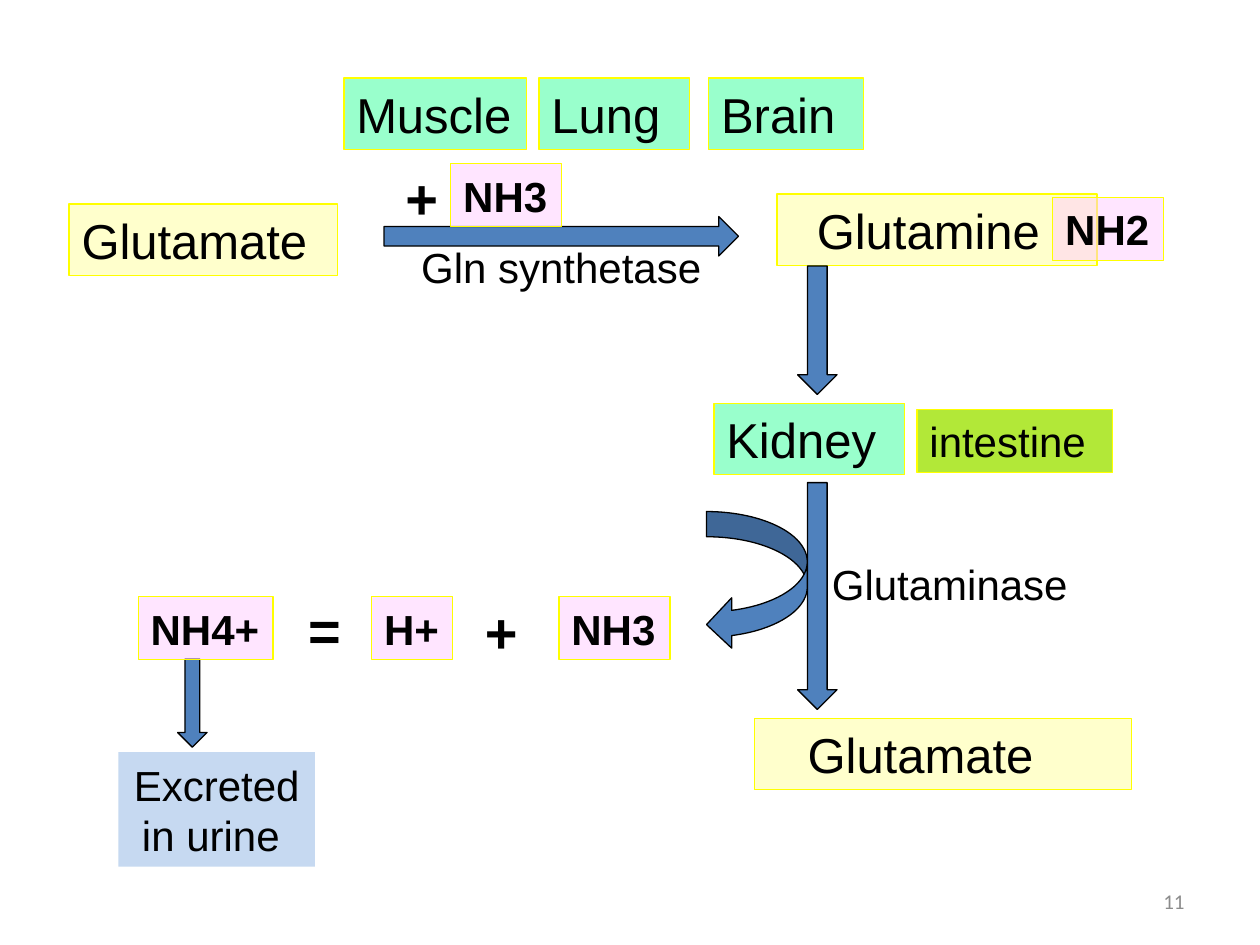
from lxml import etree
from pptx import Presentation
from pptx.dml.color import RGBColor
from pptx.enum import shapes, text
from pptx.oxml import ns
from pptx.util import Pt

GREEN, CREAM, PINK = "99FFCC", "FFFFCC", "FFCCFF"
LEFT, MID, RIGHT = text.PP_ALIGN.LEFT, text.PP_ALIGN.CENTER, text.PP_ALIGN.RIGHT
KIND = shapes.MSO_SHAPE


def color(code):
    return RGBColor.from_string(code)


class Page:
    font = "Arial"
    ink = "000000"
    blue = "4F81BD"
    edge = "FFFF00"
    high = {24: 36, 28: 41, 32: 46}

    def __init__(self, slide):
        self.slide = slide

    def shape(self, kind, x, y, w, h, fill, line):
        item = self.slide.shapes.add_shape(kind, Pt(x), Pt(y), Pt(w), Pt(h))
        item.shadow.inherit = False
        item.fill.solid()
        item.fill.fore_color.rgb = color(fill)
        if line:
            item.line.color.rgb = color(line)
            item.line.width = Pt(0.75)
        else:
            item.line.fill.background()
        return item

    def put(self, item, words, size, bold=False, align=LEFT, inset=7.2,
            ink=None, font=None):
        frame = item.text_frame
        frame.text = words
        frame.word_wrap = True
        frame.margin_left = Pt(inset)
        frame.margin_right = Pt(0 if align == LEFT else 7.2)
        part = frame.paragraphs[0]
        part.alignment = align
        style = part.runs[0].font
        style.name = font or self.font
        style.size = Pt(size)
        style.bold = bold
        style.color.rgb = color(ink or self.ink)

    def box(self, words, x, y, w, fill, size=28, inset=7.2):
        item = self.shape(KIND.RECTANGLE, x, y, w, self.high[size], fill, self.edge)
        self.put(item, words, size, inset=inset)

    def ion(self, words, x, y, w=63.4):
        item = self.shape(KIND.RECTANGLE, x, y, w, self.high[24], PINK, self.edge)
        self.put(item, words, 24, bold=True)
        tint = item.element.spPr.find(ns.qn("a:solidFill"))[0]
        etree.SubElement(tint, ns.qn("a:alpha"), val="50000")

    def arrow(self, kind, x, y, w, h, turn=0):
        item = self.shape(kind, x, y, w, h, self.blue, self.ink)
        item.rotation = turn

    def label(self, words, x, y, w, size, h=None, **style):
        item = self.slide.shapes.add_textbox(
            Pt(x), Pt(y), Pt(w), Pt(h or self.high[size]))
        self.put(item, words, size, **style)
        return item

    def sign(self, words, x, y):
        self.label(words, x, y, 33, 32, bold=True)


def main():
    deck = Presentation()
    deck.slide_width, deck.slide_height = Pt(720), Pt(540)
    page = Page(deck.slides.add_slide(deck.slide_layouts[6]))

    for organ, x, w in (("Muscle", 196.5, 104.5), ("Lung", 308, 86),
                        ("Brain", 405, 88.5)):
        page.box(organ, x, 44.6, w, GREEN)

    page.box("Glutamate", 39.5, 116.6, 153.5, CREAM)
    page.box("Glutamine", 444, 110.8, 183, CREAM, inset=22.8)
    page.box("Kidney", 408, 230.4, 109, GREEN)
    page.box("intestine", 524, 234, 111.6, "B2E838", 24)
    page.box("Glutamate", 431, 410.4, 215.5, CREAM, inset=30.5)

    page.arrow(KIND.RIGHT_ARROW, 219.5, 123.8, 202.5, 22.5)
    for x, y, w, h in ((455.8, 152, 22.5, 73.4), (455.8, 275.8, 22.5, 129.6),
                       (101.5, 376.6, 16.8, 50.4)):
        page.arrow(KIND.DOWN_ARROW, x, y, w, h)
    page.arrow(KIND.CURVED_DOWN_ARROW, 393, 303, 79, 57.6, 90)

    page.ion("NH3", 257.6, 93.6)
    page.ion("NH2", 601.6, 112.8)
    for words, x, w in (("NH4+", 79, 77), ("H+", 212.4, 46), ("NH3", 319.4, 63.4)):
        page.ion(words, x, 341, w)

    page.sign("+", 224.6, 90)
    page.sign("=", 169, 336.6)
    page.sign("+", 270, 337.6)

    page.label("Gln synthetase", 208, 134.6, 225.4, 24, align=MID)
    page.label("Glutaminase ", 433.4, 315.4, 225.4, 24, align=MID)

    waste = page.shape(KIND.RECTANGLE, 67.6, 429.8, 112.4, 65.5, "C6D9F1", None)
    page.put(waste, "Excreted in urine ", 24, align=MID)

    number = page.label("11", 516, 500.5, 168, 12, 28.8, align=RIGHT,
                        ink="8C8C8C", font="Calibri")
    number.text_frame.vertical_anchor = text.MSO_ANCHOR.MIDDLE

    deck.save("out.pptx")


if __name__ == "__main__":
    main()
